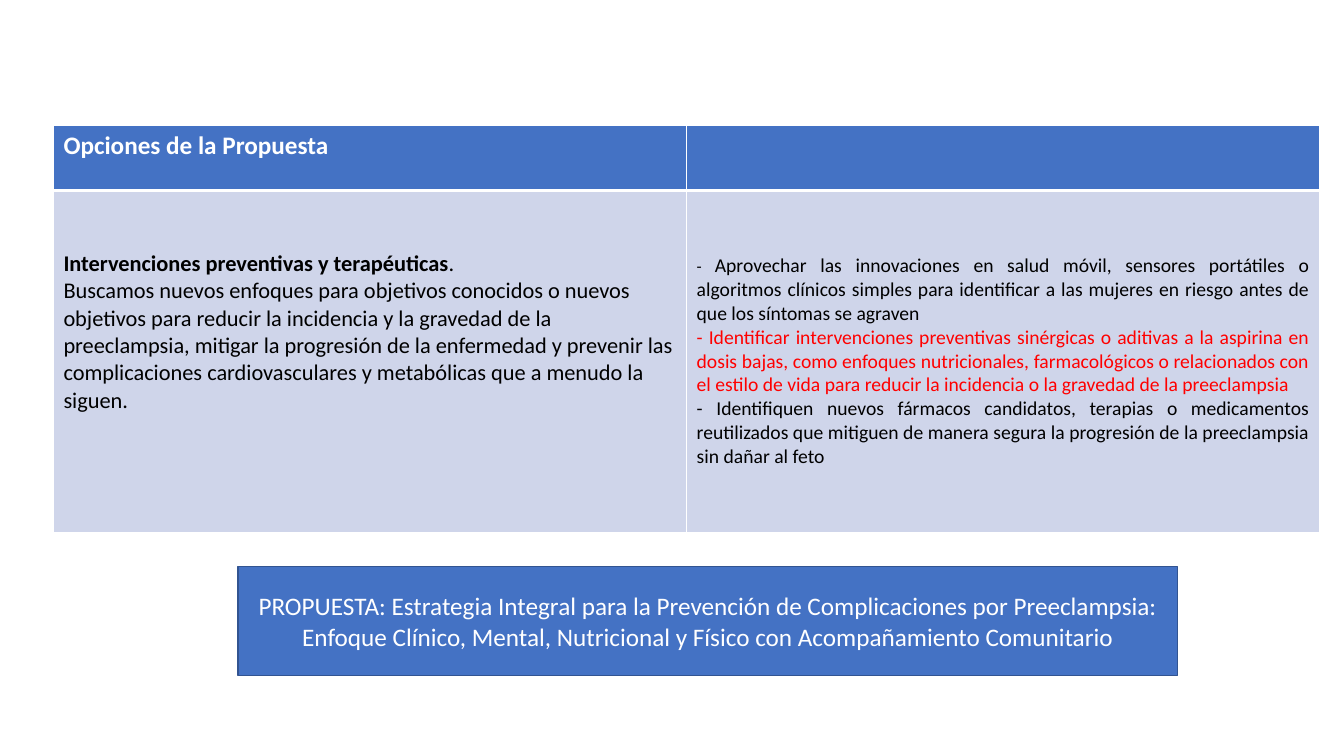
from dataclasses import dataclass

import lxml.etree
import pptx
import pptx.dml.color
import pptx.enum.shapes
import pptx.enum.text
import pptx.oxml.ns
import pptx.util

Inches = pptx.util.Inches
Pt = pptx.util.Pt
Align = pptx.enum.text.PP_ALIGN
Anchor = pptx.enum.text.MSO_ANCHOR

FONT = "Calibri"
BLUE, DARK_BLUE, PALE_BLUE = "4472C4", "325491", "CFD5EA"
WHITE, BLACK, RED = "FFFFFF", "000000", "FF0000"


@dataclass(frozen=True)
class Span:
    text: str
    size: float
    color: str = BLACK
    bold: bool = False


@dataclass(frozen=True)
class CellContent:
    fill: str
    paragraphs: tuple[tuple[Span, ...], ...] = ()
    align: Align = Align.LEFT
    anchor: Anchor = Anchor.TOP
    top_margin: float = 0.05


HEADER = (
    CellContent(BLUE, ((Span("Opciones de la Propuesta", 18, WHITE, True),),)),
    CellContent(BLUE),
)
BODY = (
    CellContent(
        PALE_BLUE,
        (
            (Span("Intervenciones preventivas y terapéuticas", 16, bold=True), Span(".", 16)),
            (Span("Buscamos nuevos enfoques para objetivos conocidos o nuevos objetivos para "
                  "reducir la incidencia y la gravedad de la preeclampsia, mitigar la progresión "
                  "de la enfermedad y prevenir las complicaciones cardiovasculares y metabólicas "
                  "que a menudo la siguen.", 16),),
        ),
        top_margin=0.59,
    ),
    CellContent(
        PALE_BLUE,
        (
            (Span("- ", 12),
             Span("Aprovechar las innovaciones en salud móvil, sensores portátiles o algoritmos "
                  "clínicos simples para identificar a las mujeres en riesgo antes de que los "
                  "síntomas se agraven", 14)),
            (Span("- Identificar intervenciones preventivas sinérgicas o aditivas a la aspirina "
                  "en dosis bajas, como enfoques nutricionales, farmacológicos o relacionados con "
                  "el estilo de vida para reducir la incidencia o la gravedad de la preeclampsia",
                  14, RED),),
            (Span("- Identifiquen nuevos fármacos candidatos, terapias o medicamentos "
                  "reutilizados que mitiguen de manera segura la progresión de la preeclampsia "
                  "sin dañar al feto", 14),),
        ),
        Align.JUSTIFY,
        Anchor.MIDDLE,
    ),
)
PROPOSAL = Span("PROPUESTA: Estrategia Integral para la Prevención de Complicaciones por "
                "Preeclampsia: Enfoque Clínico, Mental, Nutricional y Físico con "
                "Acompañamiento Comunitario", 18, WHITE)


def rgb(color: str) -> pptx.dml.color.RGBColor:
    return pptx.dml.color.RGBColor.from_string(color)


def paint(target, color: str) -> None:
    target.fill.solid()
    target.fill.fore_color.rgb = rgb(color)


def write(frame, paragraphs: tuple[tuple[Span, ...], ...], align: Align) -> None:
    for index, spans in enumerate(paragraphs):
        para = frame.add_paragraph() if index else frame.paragraphs[0]
        para.alignment = align
        for span in spans:
            run = para.add_run()
            run.text = span.text
            run.font.name = FONT
            run.font.size = Pt(span.size)
            run.font.bold = span.bold
            run.font.color.rgb = rgb(span.color)


def add_borders(cell, top: float, bottom: float) -> None:
    """Draw white cell edges; the side edges are always one point wide."""
    properties = cell._tc.get_or_add_tcPr()
    qualified = pptx.oxml.ns.qn
    for side, width in (("L", 1), ("R", 1), ("T", top), ("B", bottom)):
        line = lxml.etree.SubElement(properties, qualified(f"a:ln{side}"), w=str(Pt(width)))
        fill = lxml.etree.SubElement(line, qualified("a:solidFill"))
        lxml.etree.SubElement(fill, qualified("a:srgbClr"), val=WHITE)


def add_options_table(page) -> None:
    table = page.shapes.add_table(
        2, 2, Inches(0.53), Inches(1.24), Inches(12.56), Inches(4.04)).table
    table.horz_banding = False
    for row, height in zip(table.rows, (0.65, 3.39)):
        row.height = Inches(height)
    for row_index, contents in enumerate((HEADER, BODY)):
        top, bottom = ((1, 3), (3, 1))[row_index]
        for column_index, content in enumerate(contents):
            cell = table.cell(row_index, column_index)
            add_borders(cell, top, bottom)
            paint(cell, content.fill)
            cell.vertical_anchor = content.anchor
            cell.margin_top = Inches(content.top_margin)
            write(cell.text_frame, content.paragraphs, content.align)


def add_proposal_box(page) -> None:
    box = page.shapes.add_shape(
        pptx.enum.shapes.MSO_SHAPE.RECTANGLE,
        Inches(2.36), Inches(5.62), Inches(9.32), Inches(1.08))
    box.shadow.inherit = False
    paint(box, BLUE)
    box.line.color.rgb = rgb(DARK_BLUE)
    box.line.width = Pt(1)
    box.text_frame.word_wrap = True
    box.text_frame.vertical_anchor = Anchor.MIDDLE
    write(box.text_frame, ((PROPOSAL,),), Align.CENTER)


def main() -> None:
    deck = pptx.Presentation()
    deck.slide_width = Inches(13.33)
    deck.slide_height = Inches(7.5)
    page = deck.slides.add_slide(deck.slide_layouts[6])
    add_options_table(page)
    add_proposal_box(page)
    deck.save("out.pptx")


if __name__ == "__main__":
    main()
